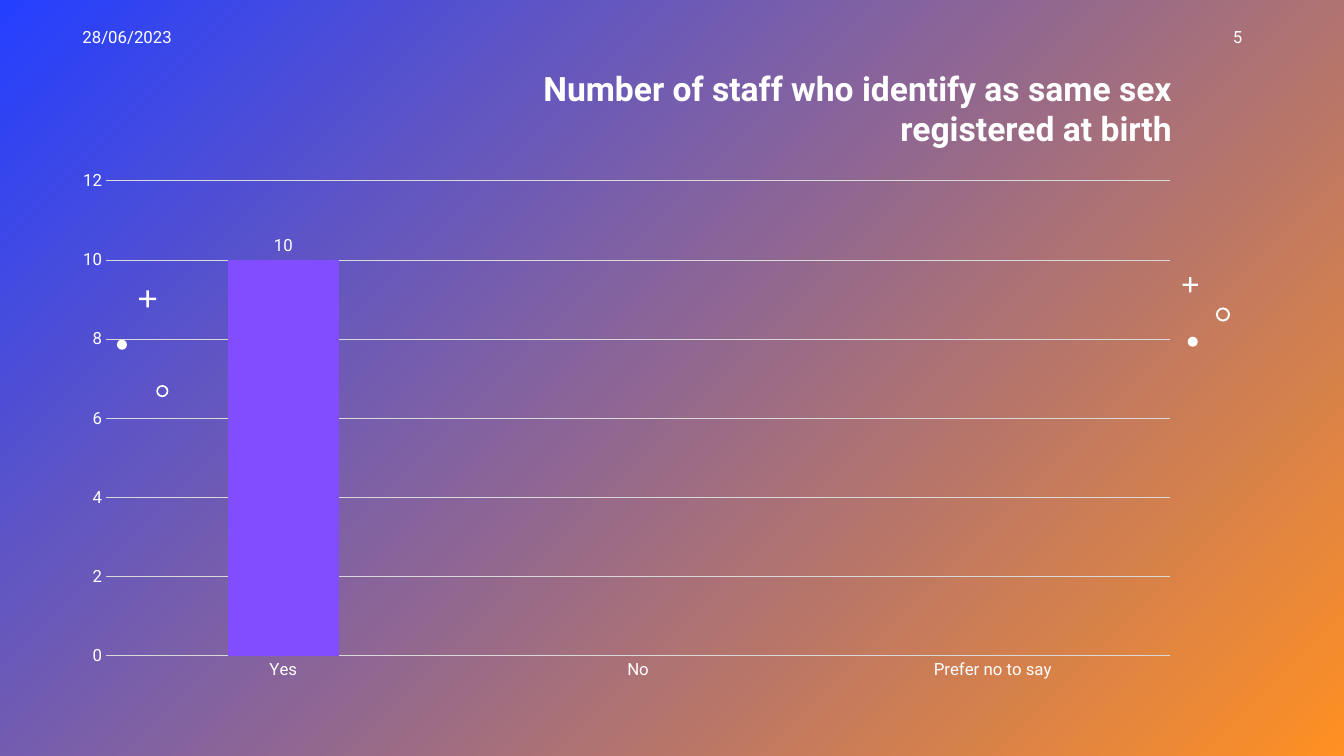
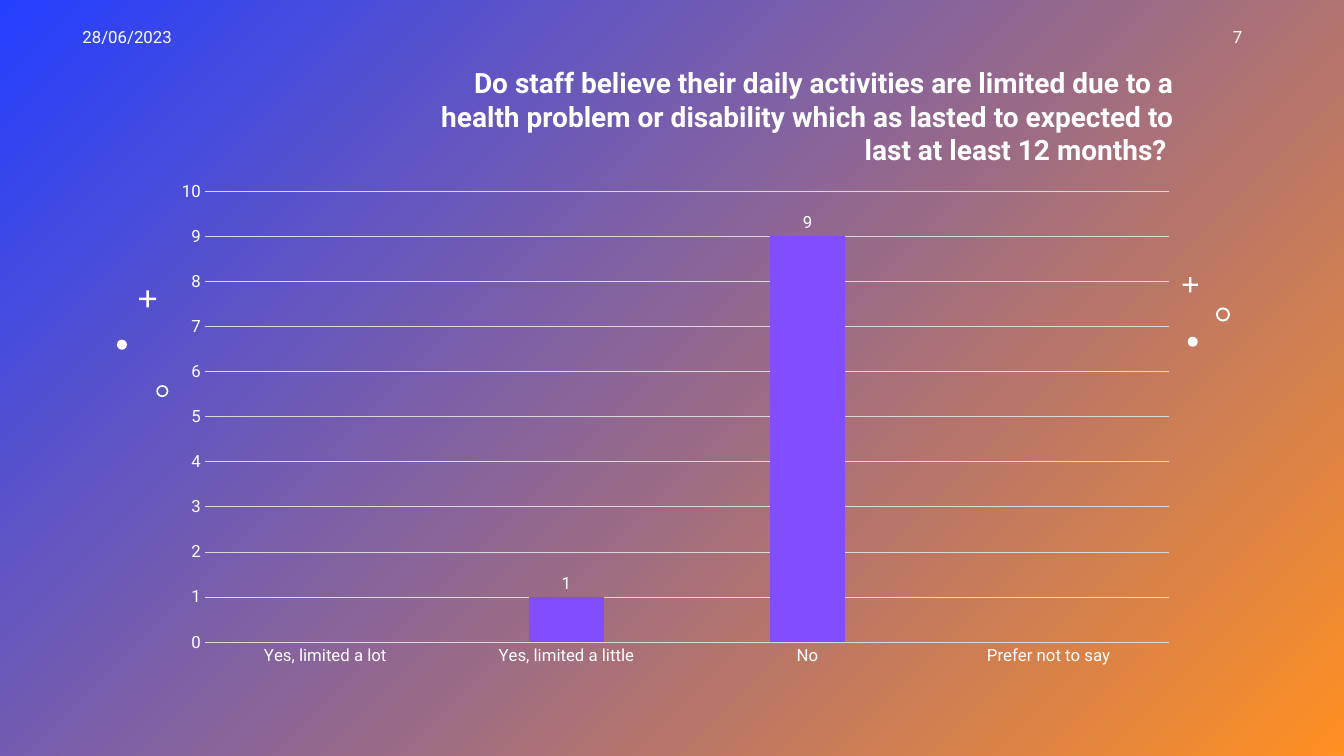
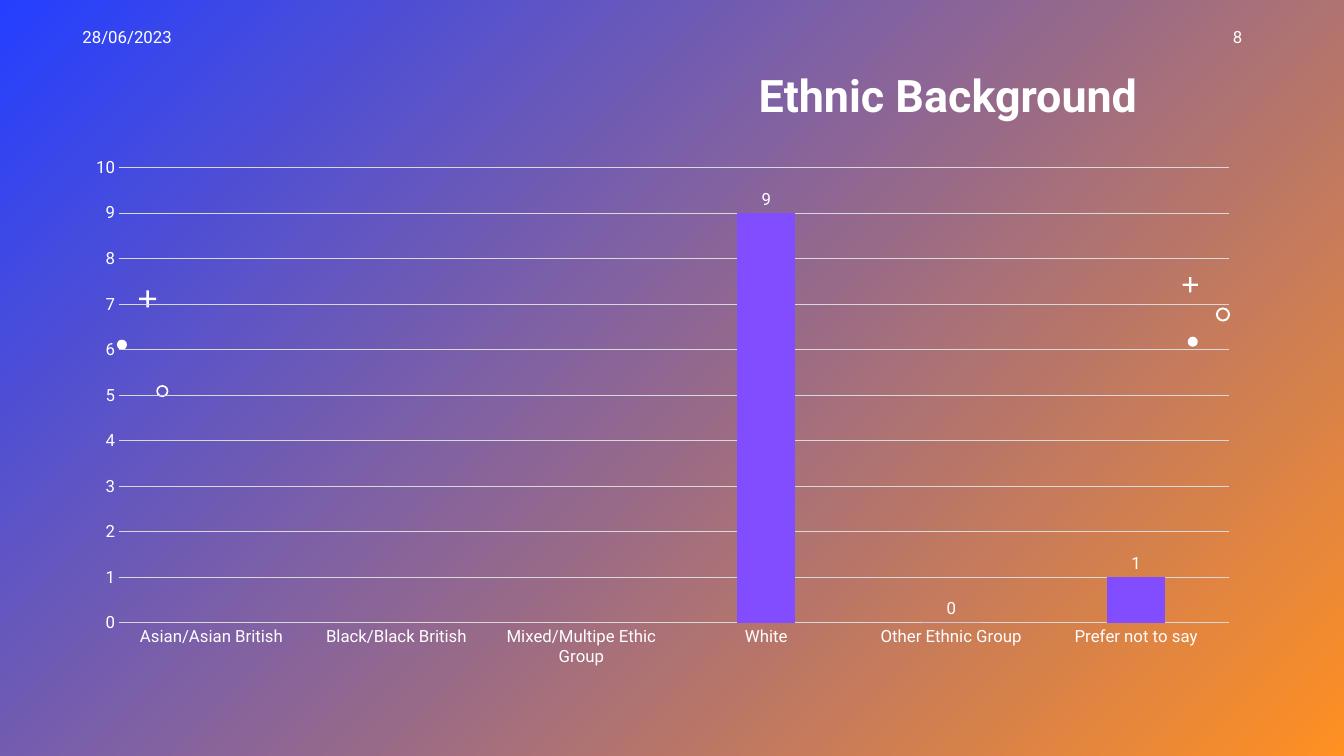
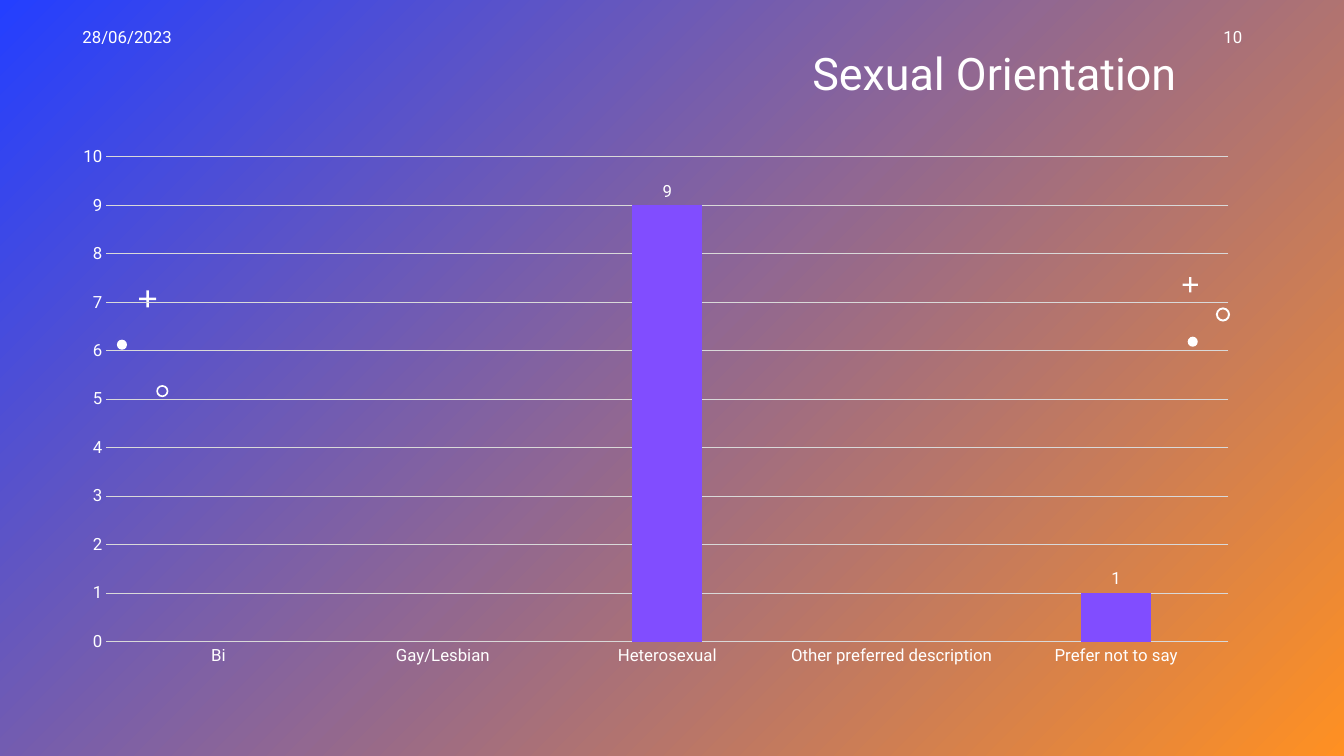
from pptx import Presentation
from pptx.chart.data import CategoryChartData
from pptx.dml.color import RGBColor
from pptx.enum.chart import XL_CHART_TYPE as ChartType
from pptx.enum.chart import XL_LABEL_POSITION as LabelPosition
from pptx.enum.chart import XL_TICK_MARK as TickMark
from pptx.enum.shapes import MSO_SHAPE as Preset
from pptx.enum.text import PP_ALIGN as Align
from pptx.util import Inches, Pt

# Shared style
WIDTH, HEIGHT = 13.33, 7.5
FONT = "Roboto"
WHITE, GRID, BAR = "FFFFFF", "D9D9D9", "814DFF"
GRADIENT = ("243FFF", "FF9022")
SMALL = 12
DATE = "28/06/2023"
DATE_BOX = (0.72, 0.22, 3, 0.4)
NUMBER_BOX = (9.42, 0.22, 3, 0.4)

# Ornaments: preset, left, top, size, adjustment
ORNAMENTS = [
    (Preset.OVAL, 11.78, 3.34, 0.1, None),
    (Preset.CROSS, 11.73, 2.75, 0.15, 0.43),
    (Preset.DONUT, 12.06, 3.05, 0.14, 0.14),
    (Preset.CROSS, 1.38, 2.88, 0.17, 0.43),
    (Preset.OVAL, 1.16, 3.37, 0.1, None),
    (Preset.DONUT, 1.55, 3.82, 0.12, 0.14),
]

# Content; boxes are left, top, width, height
SLIDES = [
    {
        "number": "5",
        "title": "Number of staff who identify as same sex registered at birth",
        "title_box": (4, 0.62, 7.72, 0.91), "size": 24, "bold": True,
        "chart_box": (0.6, 1.59, 11.23, 5.26), "top": 12, "step": 2,
        "answers": [("Yes", 10), ("No", None), ("Prefer no to say", None)],
    },
    {
        "number": "7",
        "title": "Do staff believe their daily activities are limited due to a health "
                 "problem or disability which as lasted to expected to last at least "
                 "12 months? ",
        "title_box": (4.14, 0.6, 7.6, 1.11), "size": 20, "bold": True,
        "chart_box": (1.6, 1.7, 10.2, 5.01), "top": 10, "step": 1,
        "answers": [("Yes, limited a lot", None), ("Yes, limited a little", 1),
                    ("No", 9), ("Prefer not to say", None)],
    },
    {
        "number": "8",
        "title": "Ethnic Background",
        "title_box": (4.97, 0.62, 6.41, 0.64), "size": 32, "bold": True,
        "chart_box": (0.72, 1.46, 11.7, 5.26), "top": 10, "step": 1,
        "answers": [("Asian/Asian British", None), ("Black/Black British", None),
                    ("Mixed/Multipe Ethic Group", None), ("White", 9),
                    ("Other Ethnic Group", 0), ("Prefer not to say", 1)],
    },
    {
        "number": "10",
        "title": "Sexual Orientation ",
        "title_box": (6.19, 0.4, 5.69, 0.64), "size": 32, "bold": False,
        "chart_box": (0.59, 1.35, 11.83, 5.36), "top": 10, "step": 1,
        "answers": [("Bi", None), ("Gay/Lesbian", None), ("Heterosexual", 9),
                    ("Other preferred description", None), ("Prefer not to say", 1)],
    },
]


def color(value):
    return RGBColor.from_string(value)


def inches(box):
    return [Inches(length) for length in box]


def style_font(font, size=SMALL, bold=False):
    font.name, font.size, font.bold = FONT, Pt(size), bold
    font.color.rgb = color(WHITE)


def style_line(line):
    line.color.rgb = color(GRID)
    line.width = Pt(0.75)


def paint_background(master):
    fill = master.background.fill
    fill.gradient()
    fill.gradient_angle = 315
    for stop, value, position in zip(fill.gradient_stops, GRADIENT, (0, 1)):
        stop.color.rgb = color(value)
        stop.position = position


def add_ornaments(slide):
    for preset, left, top, size, adjustment in ORNAMENTS:
        shape = slide.shapes.add_shape(preset, *inches((left, top, size, size)))
        shape.shadow.inherit = False
        shape.fill.solid()
        shape.fill.fore_color.rgb = color(WHITE)
        shape.line.fill.background()
        if adjustment is not None:
            shape.adjustments[0] = adjustment


def add_text(slide, text, box, align=Align.RIGHT, size=SMALL, bold=False):
    frame = slide.shapes.add_textbox(*inches(box)).text_frame
    frame.word_wrap = True
    paragraph = frame.paragraphs[0]
    paragraph.alignment = align
    run = paragraph.add_run()
    run.text = text
    style_font(run.font, size, bold)


def add_column_chart(slide, box, answers, top, step):
    data = CategoryChartData()
    data.categories = [name for name, _ in answers]
    data.add_series("Series 1", [count for _, count in answers])
    chart = slide.shapes.add_chart(
        ChartType.COLUMN_CLUSTERED, *inches(box), data).chart
    chart.has_legend = chart.has_title = False
    style_font(chart.font)

    # Axes
    categories, values = chart.category_axis, chart.value_axis
    for axis in (categories, values):
        axis.major_tick_mark = axis.minor_tick_mark = TickMark.NONE
        style_font(axis.tick_labels.font)
    style_line(categories.format.line)
    values.format.line.fill.background()
    values.has_major_gridlines = True
    style_line(values.major_gridlines.format.line)
    values.minimum_scale, values.maximum_scale = 0, top
    values.major_unit = step

    # Columns and their labels
    plot = chart.plots[0]
    plot.gap_width, plot.overlap, plot.vary_by_categories = 219, -27, False
    series = plot.series[0]
    series.format.fill.solid()
    series.format.fill.fore_color.rgb = color(BAR)
    labels = series.data_labels
    labels.show_value = True
    labels.position = LabelPosition.OUTSIDE_END
    style_font(labels.font)


def main():
    presentation = Presentation()
    presentation.slide_width, presentation.slide_height = inches((WIDTH, HEIGHT))
    paint_background(presentation.slide_master)
    for content in SLIDES:
        slide = presentation.slides.add_slide(presentation.slide_layouts[6])
        add_ornaments(slide)
        add_column_chart(slide, content["chart_box"], content["answers"],
                         content["top"], content["step"])
        add_text(slide, DATE, DATE_BOX, Align.LEFT)
        add_text(slide, content["number"], NUMBER_BOX)
        add_text(slide, content["title"], content["title_box"],
                 size=content["size"], bold=content["bold"])
    presentation.save("out.pptx")


if __name__ == "__main__":
    main()
